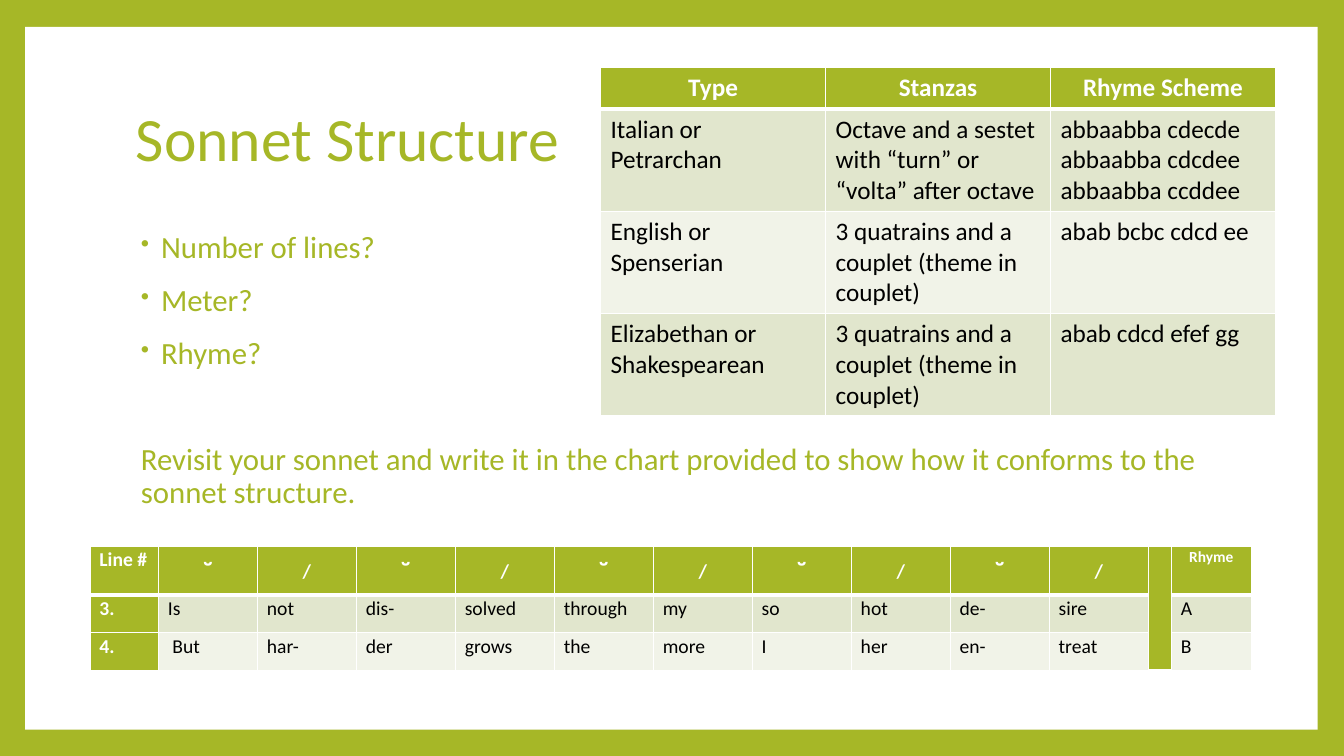
import pptx
import pptx.dml.color
import pptx.enum.shapes
import pptx.enum.text
import pptx.oxml
import pptx.oxml.ns
import pptx.util

Pt = pptx.util.Pt
RGB = pptx.dml.color.RGBColor.from_string
ALIGN = pptx.enum.text.PP_ALIGN
ANCHOR = pptx.enum.text.MSO_ANCHOR

THEME = {
    "font": "Calibri",
    "green": "A6B727", "white": "FFFFFF", "black": "000000",
    "bands": ["E1E6CD", "F1F3E8"],
    "title": 44, "body": 22, "types": 18, "meter": 14, "breve": 20, "rhyme": 11,
}


def write(tf, text, size, color, bold=False, **formats):
    """Fill a text frame, one paragraph per line, with the given paragraph formats."""
    tf.word_wrap = True
    for i, line in enumerate(text.split("\n")):
        p = tf.paragraphs[0] if i == 0 else tf.add_paragraph()
        for name, value in formats.items():
            setattr(p, name, value)
        r = p.add_run()
        r.text = line
        r.font.name = THEME["font"]
        r.font.size = Pt(size)
        r.font.bold = bold
        r.font.color.rgb = RGB(THEME[color])


def style_cell(cell, fill, top=1, bottom=1):
    """Give a cell its fill and white borders of the given widths."""
    tcPr = cell._tc.get_or_add_tcPr()
    for side, width in {"L": 1, "R": 1, "T": top, "B": bottom}.items():
        tcPr.append(pptx.oxml.parse_xml(
            f'<a:ln{side} {pptx.oxml.ns.nsdecls("a")} w="{Pt(width)}"><a:solidFill>'
            f'<a:srgbClr val="{THEME["white"]}"/></a:solidFill></a:ln{side}>'))
    cell.fill.solid()
    cell.fill.fore_color.rgb = RGB(fill)


prs = pptx.Presentation()
prs.slide_width, prs.slide_height = Pt(960), Pt(540)
s = prs.slides.add_slide(prs.slide_layouts[6])
s.background.fill.solid()
s.background.fill.fore_color.rgb = RGB(THEME["green"])

page = s.shapes.add_shape(pptx.enum.shapes.MSO_SHAPE.RECTANGLE,
                          Pt(18), Pt(19.2), Pt(923.3), Pt(502))
page.shadow.inherit = False
page.fill.solid()
page.fill.fore_color.rgb = RGB(THEME["white"])
page.line.fill.background()

# Title, questions and task
title = s.shapes.add_textbox(Pt(90), Pt(48), Pt(777.6), Pt(106.8))
title.text_frame.vertical_anchor = ANCHOR.MIDDLE
write(title.text_frame, "Sonnet Structure", THEME["title"], "green", line_spacing=0.9)

body = s.shapes.add_textbox(Pt(90), Pt(162), Pt(777.6), Pt(318))
write(body.text_frame,
      "Number of lines?\nMeter?\nRhyme?\n"
      "Revisit your sonnet and write it in the chart provided "
      "to show how it conforms to the sonnet structure.",
      THEME["body"], "green", line_spacing=0.9, space_before=Pt(14))
*questions, task = body.text_frame.paragraphs
for p in questions:
    pPr = p._p.get_or_add_pPr()
    pPr.set("marL", str(Pt(18)))
    pPr.set("indent", str(Pt(-14.4)))
    for bullet in (f'buClr {{}}><a:srgbClr val="{THEME["green"]}"/></a:buClr>',
                   'buSzPct {} val="80000"/>', 'buChar {} char="•"/>'):
        pPr.append(pptx.oxml.parse_xml("<a:" + bullet.format(pptx.oxml.ns.nsdecls("a"))))
task.space_before = Pt(52.2)
task._p.get_or_add_pPr().set("marL", str(Pt(3.6)))

# Scansion chart
feet = ["˘", "/"] * 5
scansion = [
    ["Line #", *feet, "", "Rhyme"],
    ["3.", "Is", "not", "dis-", "solved", "through", "my", "so", "hot", "de-", "sire", "", "A"],
    ["4.", " But", "har-", "der", "grows", "the", "more", "I", "her", "en-", "treat", "", "B"],
]
# Sonnet types
couplet = "3 quatrains and a couplet (theme in couplet)"
types = [
    ["Type", "Stanzas", "Rhyme Scheme"],
    ["Italian or Petrarchan", "Octave and a sestet with “turn” or “volta” after octave",
     "abbaabba cdecde\nabbaabba cdcdee\nabbaabba ccddee"],
    ["English or Spenserian", couplet, "abab bcbc cdcd ee"],
    ["Elizabethan or Shakespearean", couplet, "abab cdcd efef gg"],
]
header_sizes = {"˘": THEME["breve"], "Rhyme": THEME["rhyme"]}
tables = [
    (scansion, 64.3, 390.3, [48.9] + [70.7] * 10 + [16.6, 57.1], [34.6, 27.2, 27.2], "meter"),
    (types, 429, 48.5, [160.7] * 3, [29.5, 73, 73, 73], "types"),
]
for rows, left, top, widths, heights, size_name in tables:
    is_scansion = rows is scansion
    table = s.shapes.add_table(len(rows), len(widths), Pt(left), Pt(top),
                               Pt(sum(widths)), Pt(sum(heights))).table
    table.first_row = table.horz_banding = False
    for column, width in zip(table.columns, widths):
        column.width = Pt(width)
    for row, height in zip(table.rows, heights):
        row.height = Pt(height)
    if is_scansion:
        table.cell(0, 11).merge(table.cell(2, 11))

    for i, row in enumerate(rows):
        for j, text in enumerate(row):
            cell = table.cell(i, j)
            divider = is_scansion and j == 11
            strong = i == 0 or divider or (is_scansion and j == 0)
            style_cell(cell, THEME["green"] if strong else THEME["bands"][(i - 1) % 2],
                       top=3 if i == 1 and not divider else 1, bottom=3 if i == 0 else 1)
            formats = {}
            if is_scansion:
                cell.margin_left = cell.margin_right = Pt(6.75)
                cell.margin_top = cell.margin_bottom = 0
                formats["line_spacing"] = 1.07
            if i == 0 and text != "Line #":
                formats["alignment"] = ALIGN.CENTER
            if text in feet:
                cell.vertical_anchor = ANCHOR.MIDDLE
            if text:
                size = header_sizes.get(text, THEME[size_name])
                write(cell.text_frame, text, size, "white" if strong else "black",
                      strong, **formats)

prs.save("out.pptx")
